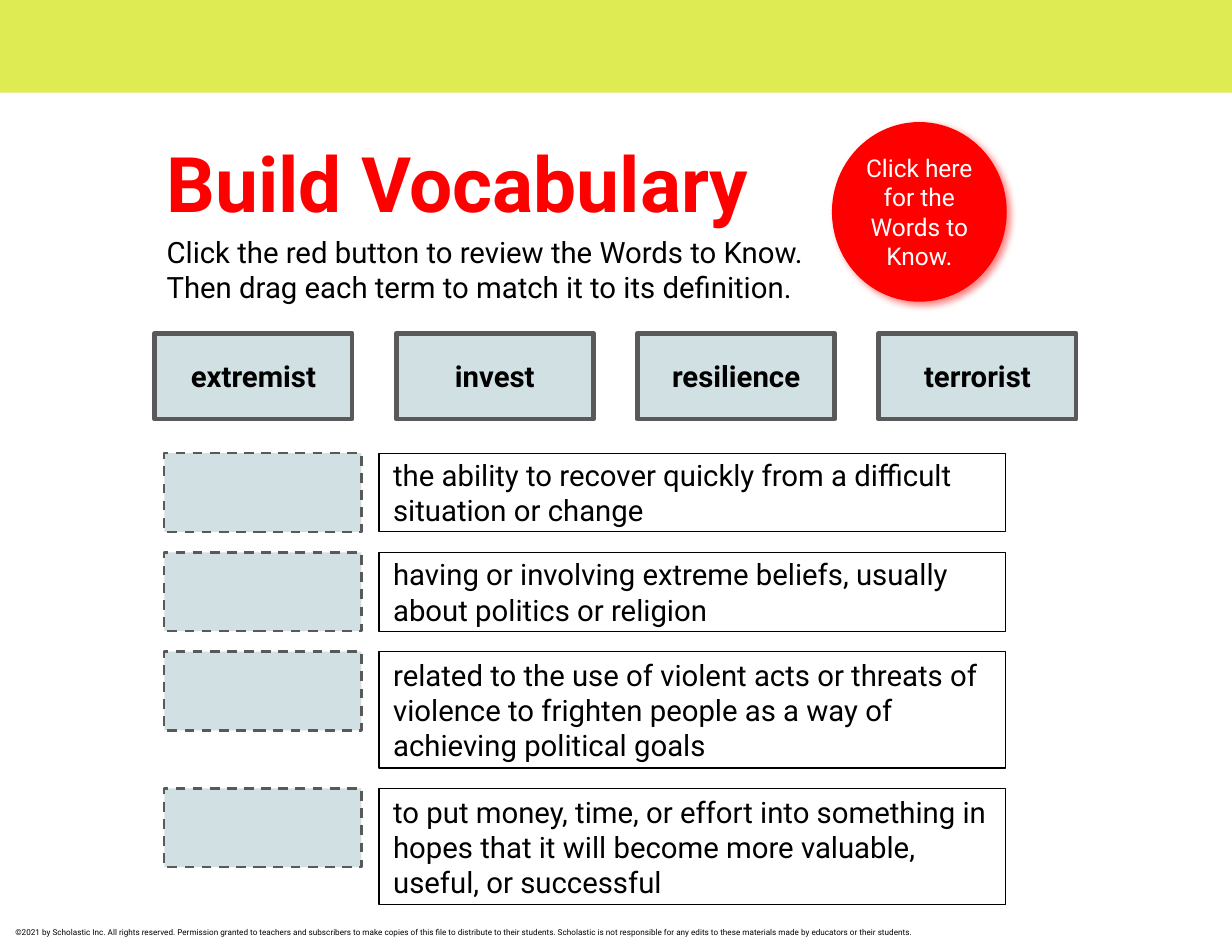
"""Build the vocabulary matching slide."""
import pptx
import pptx.util
import pptx.oxml
import pptx.oxml.ns
import pptx.dml.color
import pptx.enum.dml
import pptx.enum.shapes
import pptx.enum.text

Pt = pptx.util.Pt
RGB = pptx.dml.color.RGBColor
KIND = pptx.enum.shapes.MSO_SHAPE
ANCHOR = pptx.enum.text.MSO_ANCHOR
ALIGN = pptx.enum.text.PP_ALIGN

LIME = RGB(0xDE, 0xEB, 0x52)
RED = RGB(0xFF, 0x00, 0x00)
BLACK = RGB(0x00, 0x00, 0x00)
WHITE = RGB(0xFF, 0xFF, 0xFF)
MIST = RGB(0xD0, 0xE0, 0xE3)
GREY = RGB(0x59, 0x59, 0x59)

BODY = {"name": "Roboto", "size": Pt(18), "bold": False}
TITLE = {**BODY, "size": Pt(47), "bold": True}
TERM = {**BODY, "bold": True}
BUTTON = {**BODY, "size": Pt(15)}
LEGAL = {**BODY, "size": Pt(5)}

TERMS = ["extremist", "invest", "resilience", "terrorist"]
MEANINGS = [
    ("the ability to recover quickly from a difficult situation or change", 48.3),
    ("having or involving extreme beliefs, usually about politics or religion", 48.3),
    ("related to the use of violent acts or threats of violence to frighten "
     "people as a way of achieving political goals", 71.3),
    ("to put money, time, or effort into something in hopes that it will become "
     "more valuable, useful, or successful", 71.3),
]
NOTICE = (
    "©2021 by Scholastic Inc. All rights reserved. Permission granted to teachers "
    "and subscribers to make copies of this file to distribute to their students. "
    "Scholastic is not responsible for any edits to these materials made by "
    "educators or their students."
)


def write(shape, text, form, color=BLACK, inset=8.64, anchor=ANCHOR.MIDDLE, align=ALIGN.LEFT):
    """Put formatted text into a shape."""
    frame = shape.text_frame
    sides = ("left", "top", "right", "bottom")
    setup = {"word_wrap": True, "vertical_anchor": anchor}
    setup.update({f"margin_{side}": Pt(inset) for side in sides})
    for key, value in setup.items():
        setattr(frame, key, value)
    para = frame.paragraphs[0]
    para.text = text
    para.alignment = align
    for run in para.runs:
        for key, value in form.items():
            setattr(run.font, key, value)
        run.font.color.rgb = color


def label(slide, box, text, form, **style):
    """Add a text box with its box given in points."""
    write(slide.shapes.add_textbox(*map(Pt, box)), text, form, **style)


def panel(slide, box, fill=None, line=None, width=0.75, dash=None, kind=KIND.RECTANGLE):
    """Add a preset shape with its box given in points."""
    shape = slide.shapes.add_shape(kind, *map(Pt, box))
    shape.shadow.inherit = False
    if fill is None:
        shape.fill.background()
    else:
        shape.fill.solid()
        shape.fill.fore_color.rgb = fill
    if line is None:
        shape.line.fill.background()
    else:
        shape.line.color.rgb = line
        shape.line.width = Pt(width)
        shape.line.dash_style = dash
    return shape


def glow(shape, color, blur, shift, angle, alpha):
    """Give a shape a soft outer shadow."""
    space = pptx.oxml.ns.nsdecls("a")
    effect = pptx.oxml.parse_xml(
        f'<a:outerShdw {space} blurRad="{Pt(blur)}" dist="{Pt(shift)}" '
        f'dir="{angle * 60000}" algn="bl" rotWithShape="0"><a:srgbClr val="{color}">'
        f'<a:alpha val="{alpha * 1000}"/></a:srgbClr></a:outerShdw>'
    )
    shape.element.spPr.find(pptx.oxml.ns.qn("a:effectLst")).append(effect)


def head(slide):
    """Add the band, title, directions and red button."""
    panel(slide, (0, -0.7, 756, 57.6), LIME)
    label(slide, (93.6, 74.9, 394.6, 64), "Build Vocabulary", TITLE,
          color=RED, anchor=ANCHOR.TOP)
    label(slide, (93.6, 133.2, 449.3, 64),
          "Click the red button to review the Words to Know.\n"
          "Then drag each term to match it to its definition.", BODY)
    button = panel(slide, (510.5, 74.9, 107.3, 110.2), RED, kind=KIND.OVAL)
    glow(button, RED, 4.5, 3, 43, 50)
    write(button, "Click here for the Words to Know.", BUTTON,
          color=WHITE, inset=0, align=ALIGN.CENTER)


def match(slide):
    """Add each definition with its drop zone."""
    top, gap = 278, 12.6
    for text, high in MEANINGS:
        write(panel(slide, (232.6, top, 384.5, high), line=BLACK), text, BODY)
        panel(slide, (100.8, top, 121, 48.3), MIST, GREY, 1.5,
              pptx.enum.dml.MSO_LINE.DASH)
        top += high + gap


def bank(slide):
    """Add the row of terms."""
    left, step = 95, 148.1
    for spot, term in enumerate(TERMS):
        card = panel(slide, (left + spot * step, 204.5, 121, 52.6), MIST, GREY, 3)
        write(card, term, TERM, inset=7.2, align=ALIGN.CENTER)


def main():
    """Build and save the slide."""
    deck = pptx.Presentation()
    deck.slide_width, deck.slide_height = Pt(756), Pt(576)
    slide = deck.slides.add_slide(deck.slide_layouts[6])
    head(slide)
    match(slide)
    bank(slide)
    label(slide, (9.4, 568.8, 631.4, 7.2), NOTICE, LEGAL, inset=0, anchor=ANCHOR.TOP)
    deck.save("out.pptx")


if __name__ == "__main__":
    main()
